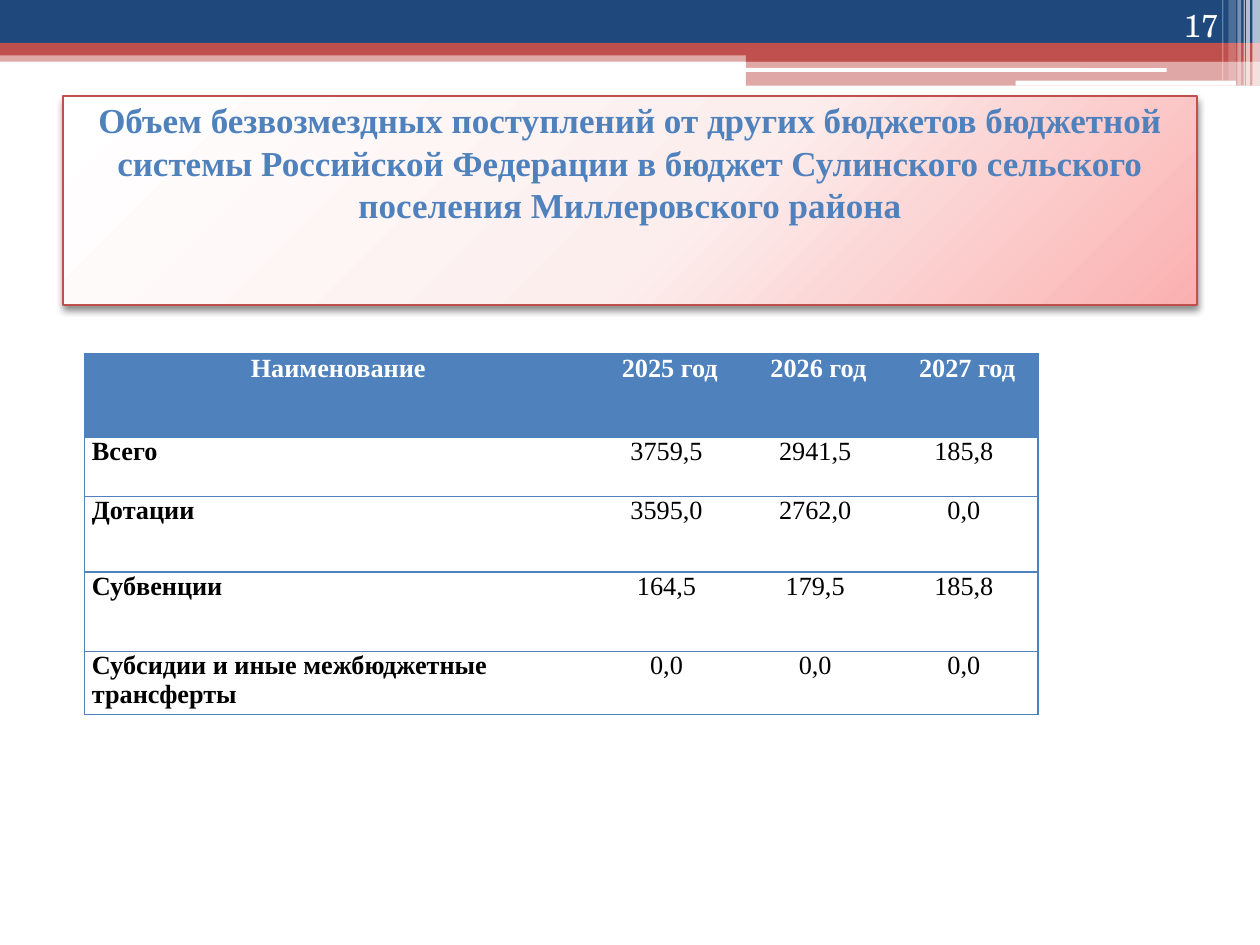
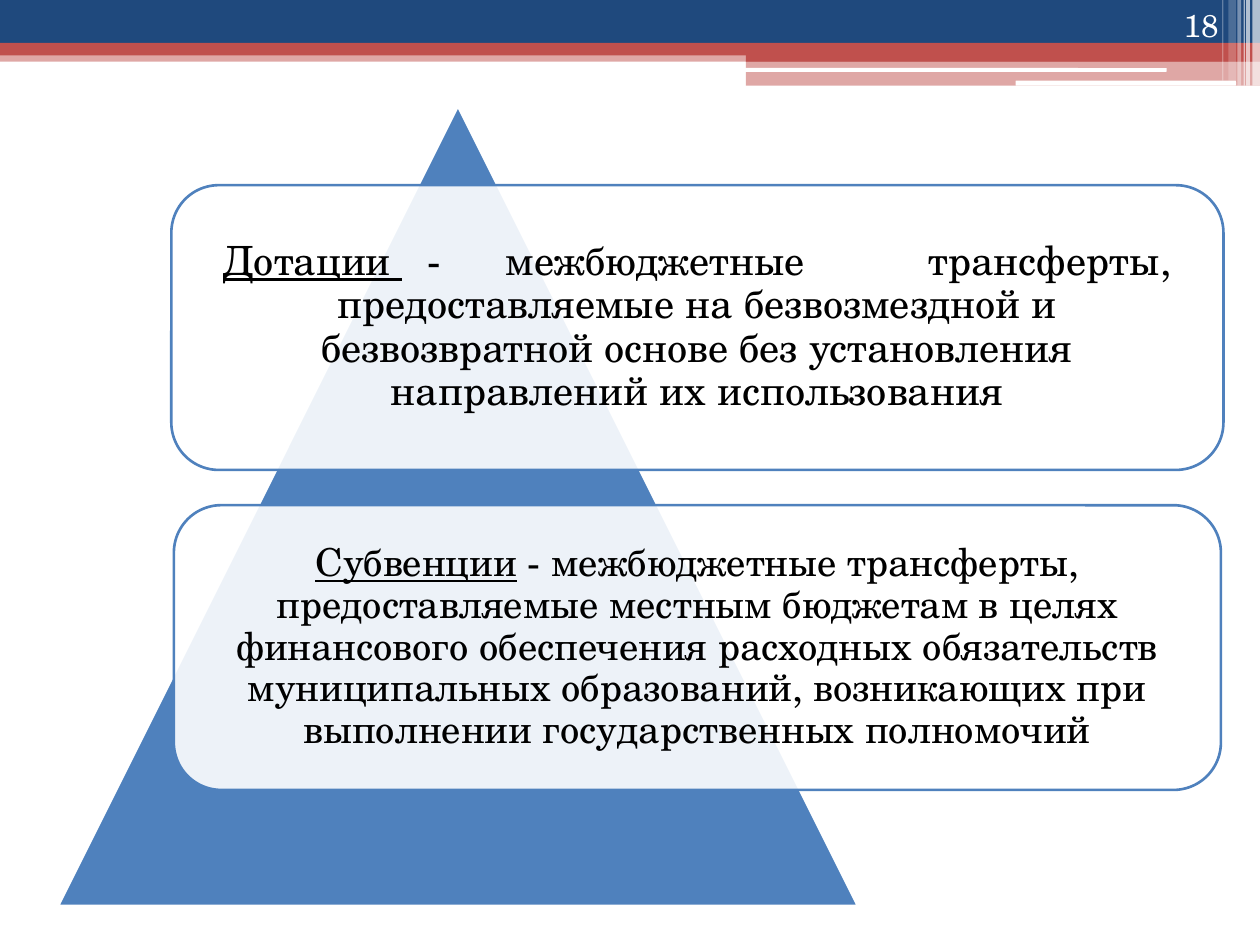
from pptx import Presentation
from pptx import util as u
from pptx.dml.color import RGBColor
from pptx.enum import shapes, text
from pptx.oxml import parse_xml
from pptx.oxml.ns import nsdecls, qn


class Theme:
    navy, red, blue = "1F497D", "C0504D", "4F81BD"
    white, black, pink, rose = "FFFFFF", "000000", "FDEEEE", "FBB0B0"
    serif, body = "Times New Roman", "TeX Gyre Schola"
    title_size, table_size, number_size = 20, 15, 18


RECT, ROUND = shapes.MSO_SHAPE.RECTANGLE, shapes.MSO_SHAPE.ROUNDED_RECTANGLE
CENTER, LEFT, RIGHT = text.PP_ALIGN.CENTER, text.PP_ALIGN.LEFT, text.PP_ALIGN.RIGHT

# Content: header bands as kind, (left, top, width, height), colour, opacity
BANDS = [
    (RECT, (0, 0.4, 10, 0.09), Theme.red, 50),
    (RECT, (0, 0, 10, 0.34), Theme.navy, 100),
    (RECT, (0, 0.34, 10, 0.1), Theme.red, 100),
    (RECT, (5.92, 0.39, 4.08, 0.1), Theme.red, 100),
    (RECT, (5.92, 0.48, 4.08, 0.2), Theme.red, 50),
    (ROUND, (5.91, 0.54, 3.35, 0.03), Theme.white, 100),
    (ROUND, (8.06, 0.64, 1.75, 0.04), Theme.white, 100),
]
# Vertical stripes at the right: left, width, height, opacity
STRIPES = [(9.94, 0.06, 0.68, 65), (9.89, 0.03, 0.68, 65), (9.87, 0.01, 0.68, 60),
           (9.82, 0.03, 0.68, 40), (9.75, 0.06, 0.64, 20), (9.7, 0.01, 0.64, 30)]
BANDS += [(RECT, (left, 0, width, height), Theme.white, opacity)
          for left, width, height, opacity in STRIPES]

TITLE = ("Объем безвозмездных поступлений от других бюджетов бюджетной системы "
         "Российской Федерации в бюджет Сулинского сельского поселения "
         "Миллеровского района")
TRANSFERS = [
    ("Наименование", " 2025 год", " 2026 год", " 2027 год"),
    ("Всего", "3759,5", "2941,5", "185,8"),
    ("Дотации", "3595,0", "2762,0", "0,0"),
    ("Субвенции", "164,5", "179,5", "185,8"),
    ("Субсидии и иные межбюджетные трансферты", "0,0", "0,0", "0,0"),
]
COLUMN_WIDTHS = [4.03, 1.18, 1.18, 1.18]
ROW_HEIGHTS = [0.66, 0.47, 0.6, 0.63, 0.5]

DEFINITIONS = [
    dict(box=(1.36, 1.47, 8.35, 2.26), inset=0.1, size=23, tabs=(1.62, 2.24, 5.6),
         term="Дотации ",
         meaning="\t-\tмежбюджетные\tтрансферты, предоставляемые на безвозмездной и "
                 "безвозвратной основе без установления направлений их использования"),
    dict(box=(1.38, 4.01, 8.31, 2.26), inset=0.09, size=22, tabs=(),
         term="Субвенции",
         meaning=" - межбюджетные трансферты, предоставляемые местным бюджетам в целях "
                 "финансового обеспечения расходных обязательств муниципальных "
                 "образований, возникающих при выполнении государственных полномочий"),
]


# Helpers
def apply(target, **values):
    for name, value in values.items():
        setattr(target, name, value)


def inches(box):
    return [u.Inches(value) for value in box]


def set_insets(target, side, top):
    apply(target, margin_left=u.Inches(side), margin_right=u.Inches(side),
          margin_top=u.Inches(top), margin_bottom=u.Inches(top))


def add_run(paragraph, words, size, color, name=Theme.body, **values):
    run = paragraph.add_run()
    run.text = words
    apply(run.font, size=u.Pt(size), name=name, **values)
    run.font.color.rgb = RGBColor.from_string(color)


def add_shape(slide, kind, box, color, opacity=100, line=None):
    shape = slide.shapes.add_shape(kind, *inches(box))
    shape.shadow.inherit = False
    shape.fill.solid()
    shape.fill.fore_color.rgb = RGBColor.from_string(color)
    if opacity < 100:
        srgb = shape.element.spPr.find(qn("a:solidFill"))[0]
        srgb.append(parse_xml(f'<a:alpha {nsdecls("a")} val="{opacity * 1000}"/>'))
    if line:
        shape.line.color.rgb = RGBColor.from_string(line)
        shape.line.width = u.Pt(1.5)
    else:
        shape.line.fill.background()
    return shape


# Shared parts
def add_master_bands(presentation, slide):
    """Draw the header bands and move them to the slide master."""
    for number, band in enumerate(BANDS, start=101):
        element = add_shape(slide, *band).element
        element.nvSpPr.cNvPr.set("id", str(number))
        presentation.slide_master.shapes.element.append(element)


def add_number(slide, number):
    frame = slide.shapes.add_textbox(*inches((8.94, 0, 0.83, 0.4))).text_frame
    apply(frame, word_wrap=True, vertical_anchor=text.MSO_ANCHOR.BOTTOM)
    frame.paragraphs[0].alignment = RIGHT
    add_run(frame.paragraphs[0], str(number), Theme.number_size, Theme.white)


# Slide with the transfers table
def add_title(slide):
    title = slide.shapes.title
    left, top, width, height = inches((0.5, 0.76, 9, 1.66))
    apply(title, left=left, top=top, width=width, height=height)
    stops = "".join(f'<a:gs pos="{place}"><a:srgbClr val="{color}"/></a:gs>' for place, color
                    in ((0, Theme.white), (55000, Theme.pink), (100000, Theme.rose)))
    properties = title.element.spPr
    properties.append(parse_xml(f'<a:gradFill {nsdecls("a")} rotWithShape="1"><a:gsLst>{stops}'
                                '</a:gsLst><a:lin ang="2700000" scaled="0"/></a:gradFill>'))
    title.line.color.rgb = RGBColor.from_string(Theme.red)
    title.line.width = u.Pt(1)
    properties.append(parse_xml(
        f'<a:effectLst {nsdecls("a")}><a:outerShdw blurRad="50000" dist="30000" dir="5400000">'
        f'<a:srgbClr val="{Theme.black}"><a:alpha val="45000"/></a:srgbClr>'
        '</a:outerShdw></a:effectLst>'))
    frame = title.text_frame
    apply(frame, word_wrap=True, auto_size=text.MSO_AUTO_SIZE.NONE,
          vertical_anchor=text.MSO_ANCHOR.TOP)
    set_insets(frame, 0.1, 0.02)
    apply(frame.paragraphs[0], alignment=CENTER, line_spacing=u.Pt(24.2))
    add_run(frame.paragraphs[0], TITLE, Theme.title_size, Theme.blue, Theme.serif, bold=True)


def set_borders(cell, visible):
    properties = cell._tc.get_or_add_tcPr()
    for side in "LRTB":
        fill = (f'<a:solidFill><a:srgbClr val="{Theme.blue}"/></a:solidFill>'
                if side in visible else "<a:noFill/>")
        properties.append(parse_xml(f'<a:ln{side} {nsdecls("a")} w="12700">{fill}</a:ln{side}>'))


def add_transfers(slide):
    box = (0.67, 2.81, sum(COLUMN_WIDTHS), sum(ROW_HEIGHTS))
    table = slide.shapes.add_table(len(TRANSFERS), len(COLUMN_WIDTHS), *inches(box)).table
    table.horz_banding = False
    for column, width in zip(table.columns, COLUMN_WIDTHS):
        column.width = u.Inches(width)
    for row, height in zip(table.rows, ROW_HEIGHTS):
        row.height = u.Inches(height)
    last = len(COLUMN_WIDTHS) - 1
    for i, values in enumerate(TRANSFERS):
        for j, value in enumerate(values):
            cell, header = table.cell(i, j), i == 0
            set_insets(cell, 0.06, 0)
            set_borders(cell, "TB" + ("L" if j == 0 else "") + ("R" if j == last else ""))
            if header:
                cell.fill.solid()
                cell.fill.fore_color.rgb = RGBColor.from_string(Theme.blue)
            else:
                cell.fill.background()
            paragraph = cell.text_frame.paragraphs[0]
            paragraph.alignment = CENTER if header or j else LEFT
            add_run(paragraph, value, Theme.table_size, Theme.white if header else Theme.black,
                    Theme.serif, bold=header or j == 0)


# Slide with the definitions over a pyramid
def add_definition(slide, definition):
    card = add_shape(slide, ROUND, definition["box"], Theme.white, 90, Theme.blue)
    frame = card.text_frame
    apply(frame, word_wrap=True, vertical_anchor=text.MSO_ANCHOR.MIDDLE)
    set_insets(frame, definition["inset"], definition["inset"])
    paragraph = frame.paragraphs[0]
    if definition["tabs"]:
        stops = "".join(f'<a:tab pos="{u.Inches(stop)}" algn="l"/>' for stop in definition["tabs"])
        paragraph._p.get_or_add_pPr().append(
            parse_xml(f'<a:tabLst {nsdecls("a")}>{stops}</a:tabLst>'))
    apply(paragraph, alignment=CENTER, line_spacing=0.9)
    add_run(paragraph, definition["term"], definition["size"], Theme.black, underline=True)
    add_run(paragraph, definition["meaning"], definition["size"], Theme.black)


def main():
    presentation = Presentation()
    apply(presentation, slide_width=u.Inches(10), slide_height=u.Inches(7.5))
    title_only, blank = presentation.slide_layouts[5], presentation.slide_layouts[6]

    transfers = presentation.slides.add_slide(title_only)
    add_master_bands(presentation, transfers)
    add_title(transfers)
    add_transfers(transfers)

    definitions = presentation.slides.add_slide(blank)
    add_shape(definitions, shapes.MSO_SHAPE.ISOSCELES_TRIANGLE, (0.46, 0.84, 6.35, 6.35),
              Theme.blue, line=Theme.white)
    for definition in DEFINITIONS:
        add_definition(definitions, definition)

    for number, slide in enumerate(presentation.slides, start=17):
        add_number(slide, number)
    presentation.save("out.pptx")


if __name__ == "__main__":
    main()
